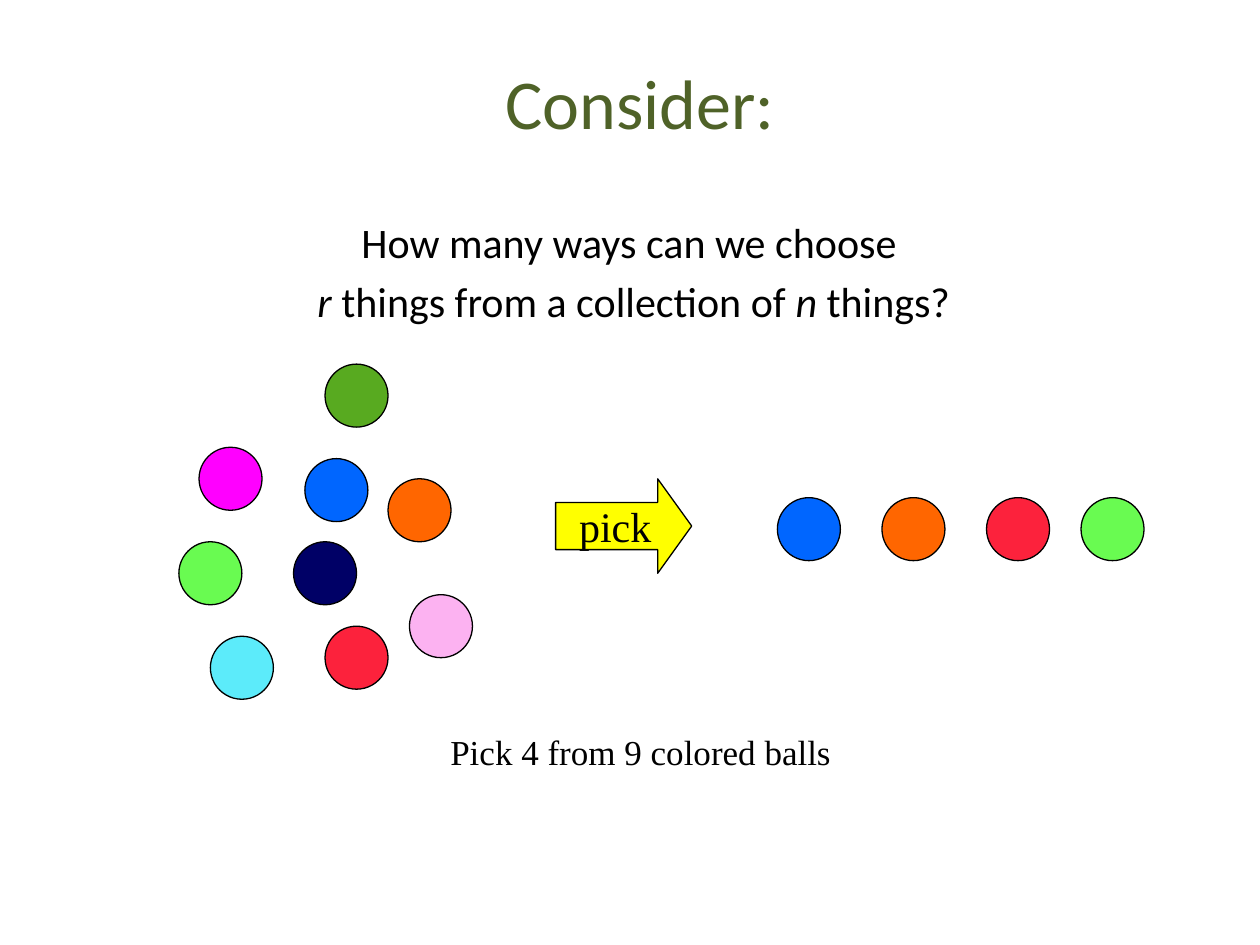
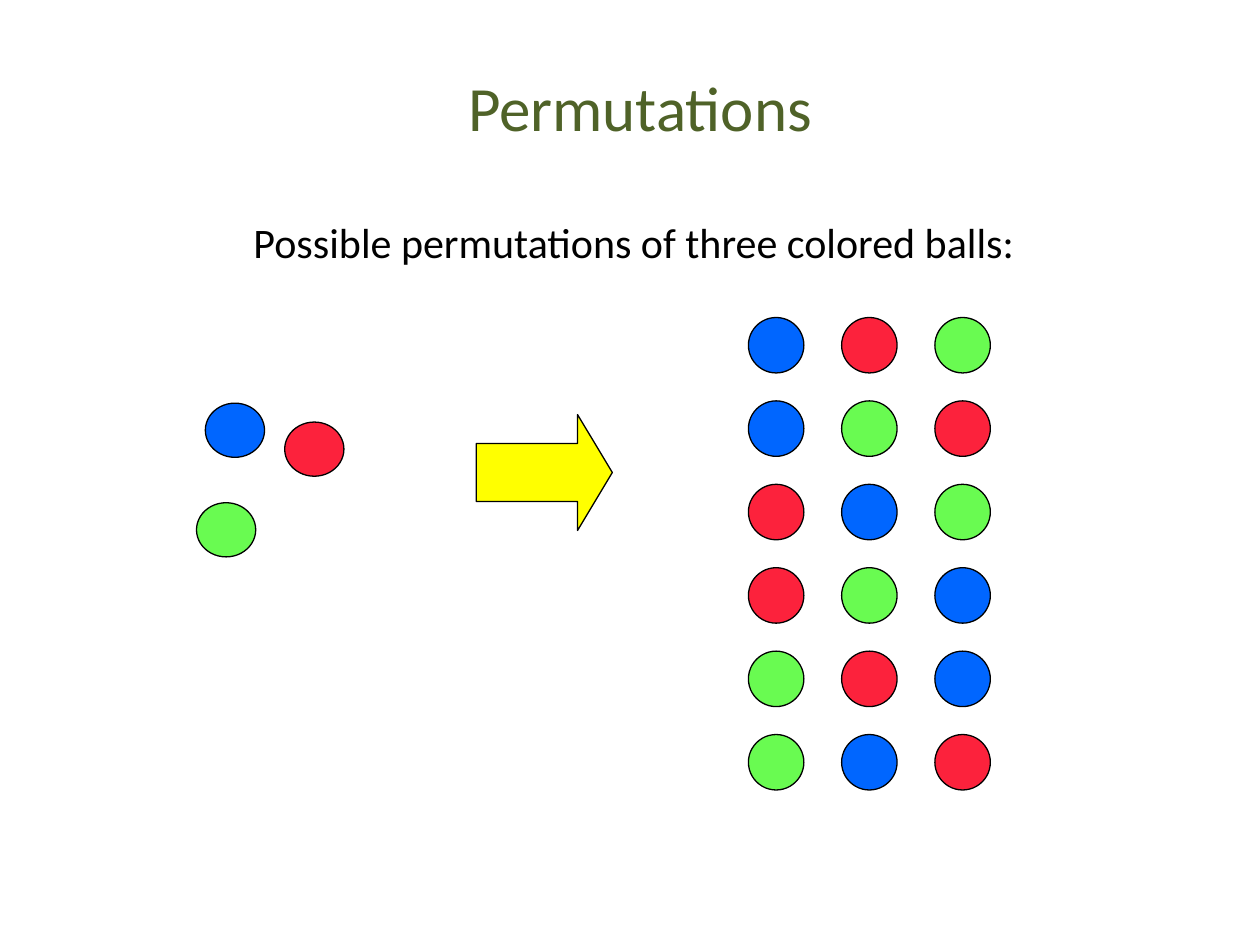
"""Build two slides on choosing and permuting colored balls."""
from pptx import Presentation, util as u
from pptx.dml.color import RGBColor
from pptx.enum import shapes as kinds, text as t

COLORS = {
    "title": "4F6228", "ink": "000000", "arrow": "FFFF00",
    "magenta": "FF00FF", "forest": "58AA20", "blue": "0066FF",
    "green": "69FB51", "navy": "000066", "cyan": "5CEBFA",
    "pink": "FCB2F1", "red": "FC223C", "orange": "FF6600",
}
OVAL = kinds.MSO_SHAPE.OVAL
ARROW = kinds.MSO_SHAPE.RIGHT_ARROW
TITLE_BOX = (0.83, 0.44, 8.5, 0.75)


def draw(parent, kind, box, color):
    shape = parent.add_shape(kind, *map(u.Inches, box))
    shape.shadow.inherit = False
    shape.fill.solid()
    shape.fill.fore_color.rgb = RGBColor.from_string(COLORS[color])
    shape.line.color.rgb = RGBColor.from_string(COLORS["ink"])
    shape.line.width = u.Pt(0.75)
    return shape


def write(frame, lines, size, name="Calibri", color="ink", wrap=True, anchor="TOP"):
    frame_format = {"word_wrap": wrap, "auto_size": t.MSO_AUTO_SIZE.NONE,
                    "vertical_anchor": t.MSO_ANCHOR[anchor]}
    for key, value in frame_format.items():
        setattr(frame, key, value)
    for index, pieces in enumerate(lines):
        paragraph = frame.add_paragraph() if index else frame.paragraphs[0]
        paragraph.alignment = t.PP_ALIGN.CENTER
        paragraph.space_before = u.Pt(0.2 * size if index else 0)
        for piece in pieces:
            run = paragraph.add_run()
            run.text = piece
            run.font.color.rgb = RGBColor.from_string(COLORS[color])
            run_format = {"size": u.Pt(size), "name": name,
                          "italic": piece in ("r", "n")}
            for key, value in run_format.items():
                setattr(run.font, key, value)


deck = Presentation()
deck.slide_width, deck.slide_height = u.Inches(10), u.Inches(7.5)

pages = [
    ("Consider:", 40, 4, [["How many ways can we choose "],
                          ["r", " things from a collection of ", "n", " things?"]]),
    ("Permutations", 36, 0.51, [["Possible permutations of three colored balls:"]]),
]
slides = []
for heading, heading_size, question_height, question_lines in pages:
    slide = deck.slides.add_slide(deck.slide_layouts[5])
    title = slide.shapes.title
    for side, length in zip(("left", "top", "width", "height"), TITLE_BOX):
        setattr(title, side, u.Inches(length))
    write(title.text_frame, [[heading]], heading_size, color="title", anchor="BOTTOM")
    question = slide.shapes.add_textbox(
        *map(u.Inches, (0.74, 1.67, 8.58, question_height)))
    write(question.text_frame, question_lines, 24)
    slides.append(slide)
choosing, permuting = slides

BALL = 0.5
collection = choosing.shapes.add_group_shape().shapes
for color, left, top in [
    ("magenta", 1.58, 3.55), ("forest", 2.58, 2.89), ("blue", 2.42, 3.64),
    ("green", 1.42, 4.3), ("navy", 2.33, 4.3), ("cyan", 1.67, 5.05),
    ("pink", 3.25, 4.72), ("red", 2.58, 4.97), ("orange", 3.08, 3.8),
]:
    draw(collection, OVAL, (left, top, BALL, BALL), color)

pick = draw(choosing.shapes, ARROW, (4.41, 3.8, 1.08, 0.75), "arrow")
pick.adjustments[1] = 0.36
write(pick.text_frame, [["pick"]], 24, "Times New Roman", wrap=False, anchor="MIDDLE")

picked = choosing.shapes.add_group_shape().shapes
for color, left in [("blue", 6.17), ("orange", 7), ("red", 7.83), ("green", 8.58)]:
    draw(picked, OVAL, (left, 3.95, BALL, BALL), color)

caption = choosing.shapes.add_textbox(*map(u.Inches, (2.67, 5.75, 4.83, 0.44)))
write(caption.text_frame, [["Pick 4 from 9 colored balls"]], 20, "Times New Roman")

trio = permuting.shapes.add_group_shape().shapes
for color, left, top in [("blue", 1.63, 3.2), ("green", 1.56, 3.99), ("red", 2.26, 3.35)]:
    draw(trio, OVAL, (left, top, 0.47, 0.43), color)

leads_to = draw(permuting.shapes, ARROW, (3.78, 3.29, 1.08, 0.92), "arrow")
leads_to.adjustments[1] = 0.3

GRID_LEFT, GRID_TOP, GRID_BOTTOM, COLUMN, GRID_BALL = 5.94, 2.52, 5.83, 0.74, 0.44
orders = ["blue red green", "blue green red", "red blue green",
          "red green blue", "green red blue", "green blue red"]
row_step = (GRID_BOTTOM - GRID_TOP) / (len(orders) - 1)
arrangements = permuting.shapes.add_group_shape().shapes
for row, order in enumerate(orders):
    for column, color in enumerate(order.split()):
        draw(arrangements, OVAL,
             (GRID_LEFT + column * COLUMN, GRID_TOP + row * row_step,
              GRID_BALL, GRID_BALL), color)

deck.save("out.pptx")
